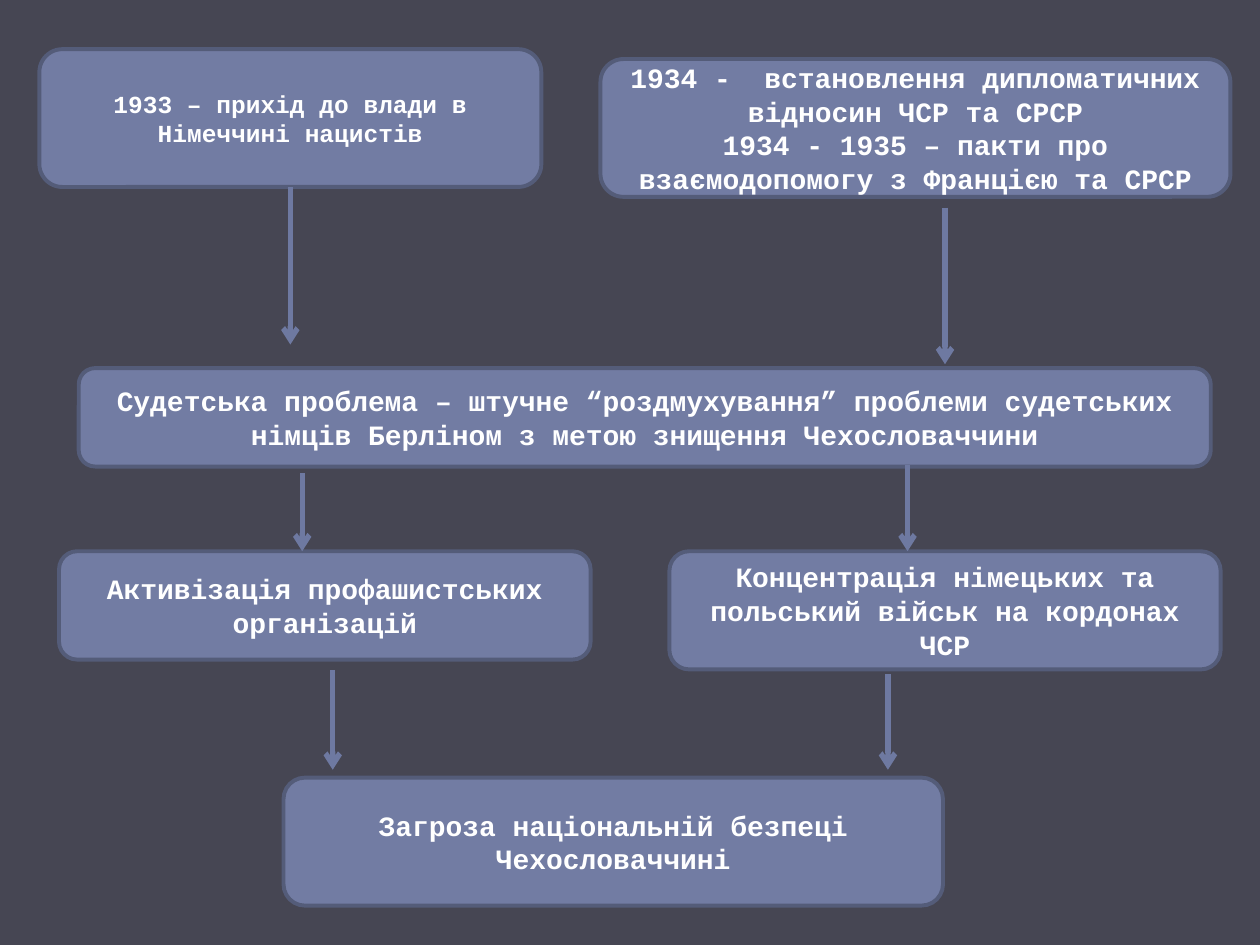
"""Build a cause-and-effect slide on the threat to Czechoslovakia in the 1930s."""
from dataclasses import dataclass

from lxml.etree import SubElement
from pptx import Presentation
from pptx.dml.color import RGBColor
from pptx.enum.shapes import MSO_CONNECTOR, MSO_SHAPE
from pptx.enum.text import MSO_ANCHOR, PP_ALIGN
from pptx.oxml.ns import qn
from pptx.util import Inches, Pt


@dataclass(frozen=True)
class Theme:
    background: RGBColor = RGBColor.from_string("464653")
    box: RGBColor = RGBColor.from_string("727CA3")
    border: RGBColor = RGBColor.from_string("545C79")
    arrow: RGBColor = RGBColor.from_string("6E79A1")
    text: RGBColor = RGBColor.from_string("FFFFFF")
    font: str = "Courier New"
    small: Pt = Pt(14)
    body: Pt = Pt(16)
    border_width: Pt = Pt(2.25)
    arrow_width: Pt = Pt(3)


theme = Theme()
deck = Presentation()
deck.slide_width, deck.slide_height = Inches(10), Inches(7.5)
COLUMNS = 128
unit = deck.slide_width / COLUMNS


def grid(*cells):
    return [round(cell * unit) for cell in cells]


slide = deck.slides.add_slide(deck.slide_layouts[6])
slide.background.fill.solid()
slide.background.fill.fore_color.rgb = theme.background

events = [
    ((8, 37.4, 115, 10), theme.body,
     ["Судетська проблема – штучне “роздмухування” проблеми судетських "
      "німців Берліном з метою знищення Чехословаччини"]),
    ((4, 5, 51, 14), theme.small, ["1933 – прихід до влади в Німеччині нацистів"]),
    ((61, 6, 64, 14), theme.body,
     ["1934 -  встановлення дипломатичних відносин ЧСР та СРСР",
      "1934 - 1935 – пакти про взаємодопомогу з Францією та СРСР"]),
    ((6, 56, 54, 11), theme.body, ["Активізація профашистських організацій"]),
    ((68, 56, 56, 12), theme.body,
     ["Концентрація німецьких та польський військ на кордонах ЧСР"]),
    ((28.8, 79, 67, 13), theme.body, ["Загроза національній безпеці Чехословаччині"]),
]

for place, size, statements in events:
    event = slide.shapes.add_shape(MSO_SHAPE.ROUNDED_RECTANGLE, *grid(*place))
    event.shadow.inherit = False
    event.fill.solid()
    event.fill.fore_color.rgb = theme.box
    event.line.color.rgb = theme.border
    event.line.width = theme.border_width
    frame = event.text_frame
    frame.word_wrap = True
    frame.vertical_anchor = MSO_ANCHOR.MIDDLE
    frame.text = "\n".join(statements)
    for paragraph in frame.paragraphs:
        paragraph.alignment = PP_ALIGN.CENTER
        paragraph.font.name = theme.font
        paragraph.font.size = size
        paragraph.font.bold = True
        paragraph.font.color.rgb = theme.text

consequences = [
    (29.5, 19, 35),
    (96, 21.1, 37),
    (33.8, 68.1, 78.2),
    (90.2, 68.5, 78.2),
    (30.7, 48.1, 56),
    (92.2, 47.2, 56),
]

for column, start, end in consequences:
    arrow = slide.shapes.add_connector(
        MSO_CONNECTOR.STRAIGHT, *grid(column, start, column, end))
    arrow.line.color.rgb = theme.arrow
    arrow.line.width = theme.arrow_width
    SubElement(arrow.line._get_or_add_ln(), qn("a:tailEnd"), type="arrow")
    SubElement(arrow._element.spPr, qn("a:effectLst"))

deck.save("out.pptx")
